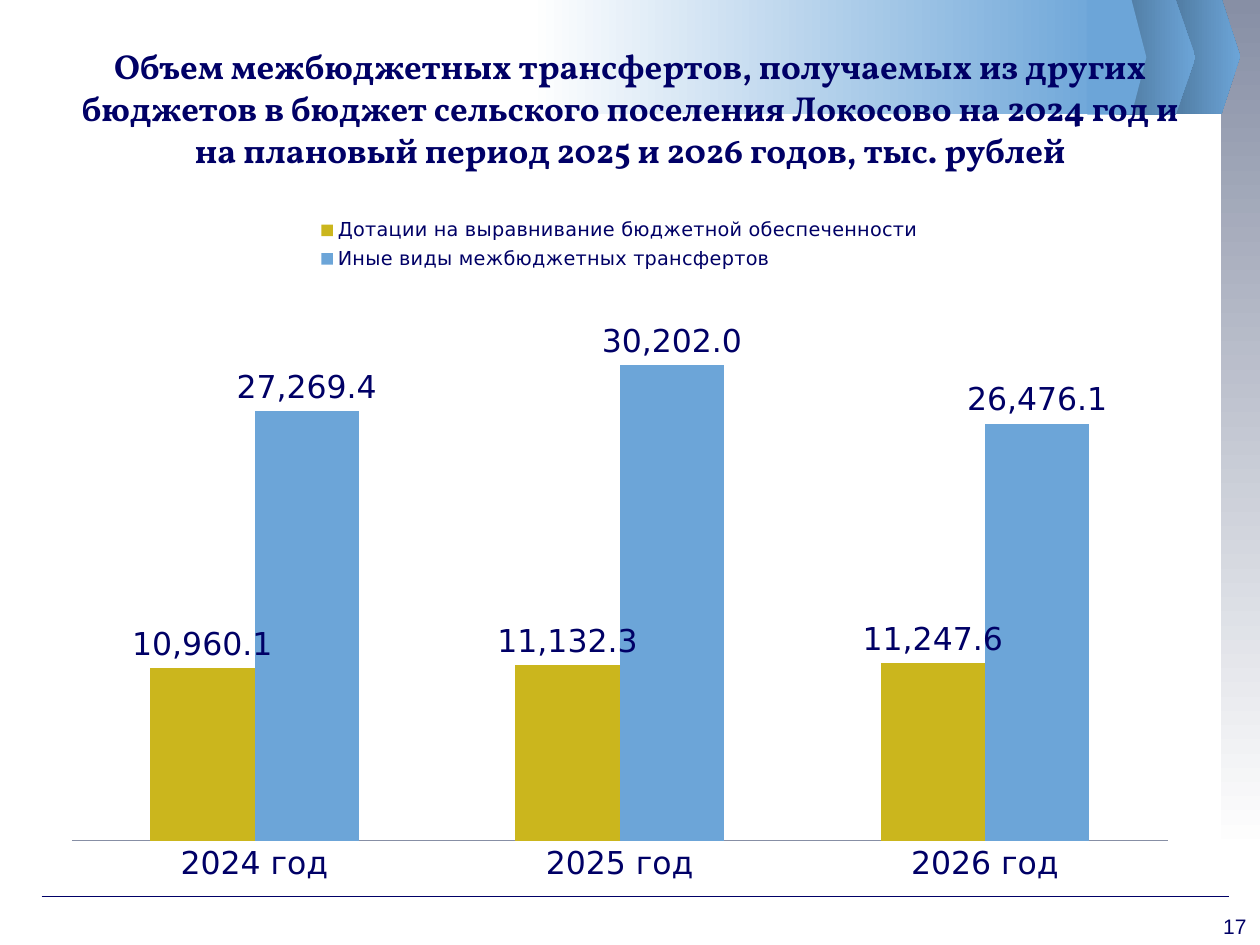
from lxml import etree
from pptx import Presentation
from pptx.chart.data import CategoryChartData
from pptx.dml.color import RGBColor
from pptx.enum.chart import XL_CHART_TYPE as CT, XL_LABEL_POSITION as LP
from pptx.enum.chart import XL_LEGEND_POSITION as LGP, XL_TICK_MARK as TM
from pptx.enum.shapes import MSO_CONNECTOR, MSO_SHAPE as SH
from pptx.enum.text import MSO_ANCHOR, PP_ALIGN
from pptx.oxml.ns import qn
from pptx.util import Cm, Pt

NAVY = RGBColor(0x00, 0x00, 0x66)
BLUE = RGBColor(0x6C, 0xA5, 0xD8)
STEEL = RGBColor(0x4D, 0x76, 0x9B)
GREY = RGBColor(0x87, 0x8F, 0xA5)
GOLD = RGBColor(0xCB, 0xB6, 0x1D)
WHITE = RGBColor(0xFF, 0xFF, 0xFF)

TITLE = ("Объем межбюджетных трансфертов, получаемых из других бюджетов "
         "в бюджет сельского поселения Локосово на 2024 год и на плановый "
         "период 2025 и 2026 годов, тыс. рублей")
YEARS = ["2024 год", "2025 год", "2026 год"]
SERIES = [
    ("Дотации на выравнивание бюджетной обеспеченности",
     (10960.1, 11132.3, 11247.6), GOLD),
    ("Иные виды межбюджетных трансфертов",
     (27269.4, 30202.0, 26476.1), BLUE),
]
NUMBER = "#,##0.0"


def add_band(s, kind, box, start, end, angle=0):
    """Borderless shape with a two-colour gradient, angle counter-clockwise."""
    sp = s.shapes.add_shape(kind, *map(Cm, box))
    sp.shadow.inherit = False
    sp.line.fill.background()
    if kind == SH.PENTAGON:
        sp.adjustments[0] = 0.25
    if start == end:
        sp.fill.solid()
        sp.fill.fore_color.rgb = start
        return
    sp.fill.gradient()
    sp.fill.gradient_angle = angle
    for stop, color, position in zip(sp.fill.gradient_stops, (start, end), (0, 1)):
        stop.color.rgb = color
        stop.position = position


def add_rule(s, x1, x2, y):
    line = s.shapes.add_connector(MSO_CONNECTOR.STRAIGHT, Cm(x1), Cm(y), Cm(x2), Cm(y))
    line.line.color.rgb = NAVY
    line.line.width = Pt(0.75)
    etree.SubElement(line._element.spPr, qn("a:effectLst"))


def add_text(s, box, text, font, size, bold=False, align=PP_ALIGN.LEFT,
             anchor=MSO_ANCHOR.TOP, wrap=True):
    tf = s.shapes.add_textbox(*map(Cm, box)).text_frame
    tf.word_wrap = wrap
    tf.vertical_anchor = anchor
    p = tf.paragraphs[0]
    p.alignment = align
    r = p.add_run()
    r.text = text
    r.font.name = font
    r.font.size = Pt(size)
    r.font.bold = bold
    r.font.color.rgb = NAVY


def style_font(font, size):
    font.name = "DejaVu Sans"
    font.size = Pt(size)
    font.color.rgb = NAVY


def make_layout(x, y, w, h, inner=False):
    """Manual chart layout, in fractions of the chart area."""
    layout = etree.Element(qn("c:layout"))
    manual = etree.SubElement(layout, qn("c:manualLayout"))
    items = [("layoutTarget", "inner")] if inner else []
    items += [("xMode", "edge"), ("yMode", "edge"),
              ("x", x), ("y", y), ("w", w), ("h", h)]
    for tag, value in items:
        etree.SubElement(manual, qn("c:" + tag)).set("val", str(value))
    return layout


def add_column_chart(s, box):
    data = CategoryChartData(number_format=NUMBER)
    data.categories = YEARS
    for name, values, _ in SERIES:
        data.add_series(name, values)
    chart = s.shapes.add_chart(CT.COLUMN_CLUSTERED, *map(Cm, box), data).chart
    chart.has_title = False
    style_font(chart.font, 18)

    # Legend above the columns
    chart.has_legend = True
    legend = chart.legend
    legend.position = LGP.TOP
    legend.include_in_layout = False
    style_font(legend.font, 11)
    for old in legend._element.findall(qn("c:layout")):
        legend._element.remove(old)
    legend._element.find(qn("c:legendPos")).addnext(make_layout(0.23, 0.01, 0.54, 0.09))

    # Axes
    chart.category_axis.major_tick_mark = TM.NONE
    chart.category_axis.format.line.color.rgb = GREY
    axis = chart.value_axis
    axis.minimum_scale, axis.maximum_scale = 0, 35000
    axis.has_major_gridlines = False
    axis.tick_labels.number_format = NUMBER
    axis.tick_labels.number_format_is_linked = False
    axis.visible = False

    # Columns and their values
    plot = chart.plots[0]
    plot.gap_width, plot.overlap = 150, 0
    plot.vary_by_categories = False
    for series, (_, _, color) in zip(plot.series, SERIES):
        series.format.fill.solid()
        series.format.fill.fore_color.rgb = color
        labels = series.data_labels
        labels.show_value = True
        labels.number_format = NUMBER
        labels.number_format_is_linked = False
        labels.position = LP.OUTSIDE_END
        style_font(labels.font, 18)
    area = plot._element.getparent()
    for old in area.findall(qn("c:layout")):
        area.remove(old)
    area.insert(0, make_layout(0.02, 0.12, 0.96, 0.8, inner=True))


def main():
    prs = Presentation()
    prs.slide_width, prs.slide_height = Cm(25.4), Cm(19.05)
    s = prs.slides.add_slide(prs.slide_layouts[6])

    # Side band, bottom rule and top ribbon
    add_band(s, SH.RECTANGLE, (24.61, 0, 0.79, 17.2), GREY, WHITE, 270)
    add_rule(s, 0.84, 24.77, 18.08)
    add_band(s, SH.PENTAGON, (23.5, -0.02, 1.5, 2.31), STEEL, BLUE)
    add_band(s, SH.PENTAGON, (22.5, 0, 1.6, 2.31), STEEL, BLUE)
    add_band(s, SH.RECTANGLE, (10.69, 0, 11.68, 2.31), WHITE, BLUE)
    add_band(s, SH.PENTAGON, (21.92, 0, 1.19, 2.31), BLUE, BLUE)

    # Title, chart and page number
    add_text(s, (1.27, 0.58, 22.86, 3.18), TITLE, "Vollkorn", 19.8, bold=True,
             align=PP_ALIGN.CENTER, anchor=MSO_ANCHOR.MIDDLE)
    add_column_chart(s, (0.99, 4.17, 23.01, 13.89))
    add_text(s, (24.41, 18.29, 0.99, 0.76), "17", "Arial", 12, wrap=False)

    prs.save("out.pptx")


if __name__ == "__main__":
    main()
